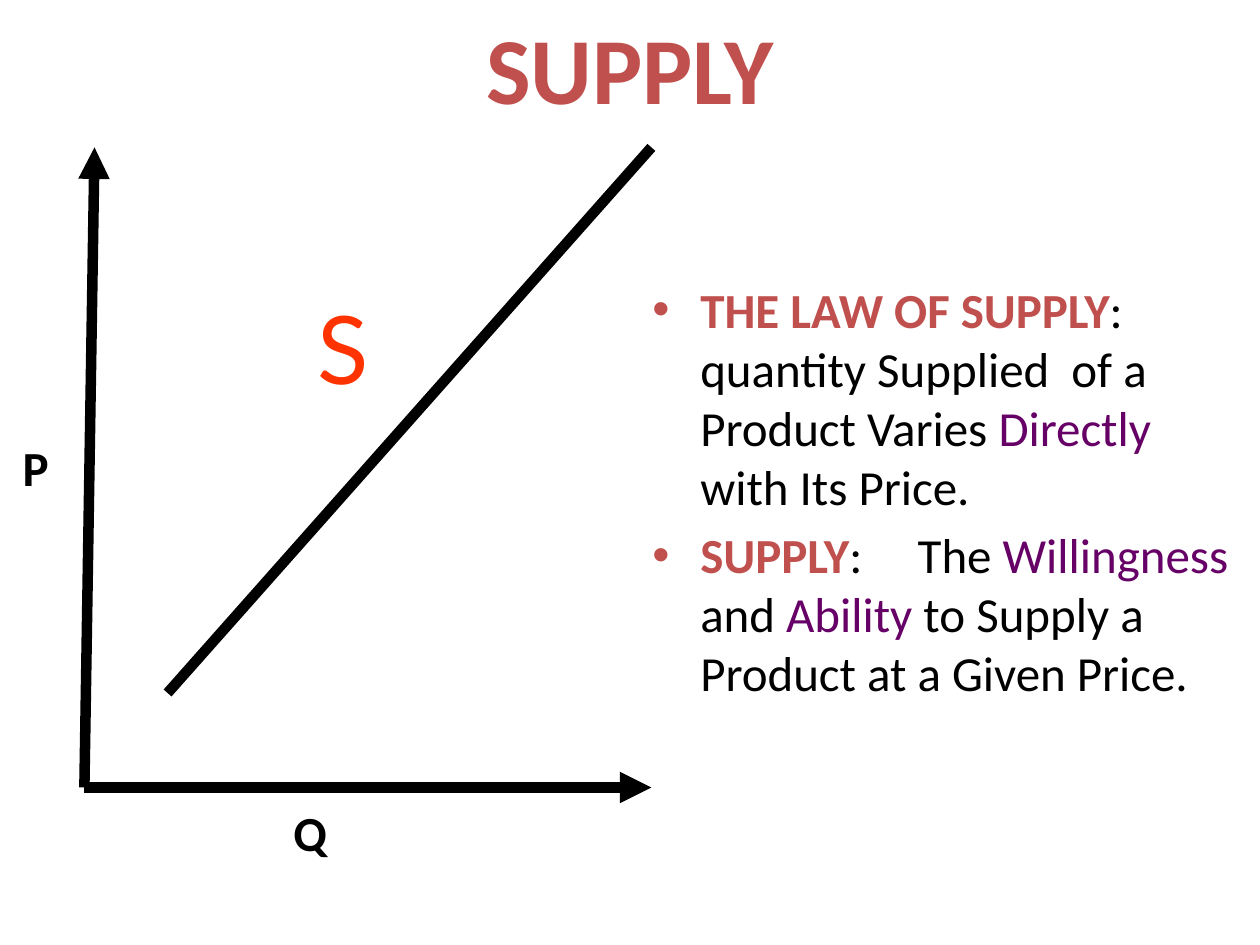
from dataclasses import dataclass

from lxml.etree import SubElement
from pptx import Presentation
from pptx.dml.color import RGBColor
from pptx.enum.shapes import MSO_CONNECTOR as Connector
from pptx.enum.text import MSO_ANCHOR as Anchor, PP_ALIGN as Align
from pptx.oxml.ns import qn
from pptx.util import Inches, Pt

RED, PURPLE, BLACK, ORANGE = "C0504D", "660066", "000000", "FF3300"


@dataclass(frozen=True)
class Line:
    start: tuple[float, float]
    end: tuple[float, float]
    arrow: bool = False


@dataclass(frozen=True)
class Label:
    text: str
    area: tuple[float, float, float, float]
    size: float = 28
    color: str = BLACK
    font: str = "Calibri"
    bold: bool = True
    align: Align = Align.LEFT
    anchor: Anchor = Anchor.TOP
    inset: float = 0.1


@dataclass(frozen=True)
class Part:
    text: str
    color: str = BLACK
    bold: bool = False
    spacing: float = 0


LINES = [
    Line((1.33, 5.5), (5.17, 1.17)),
    Line((0.67, 6.25), (0.75, 1.17), arrow=True),
    Line((0.67, 6.25), (5.17, 6.25), arrow=True),
]
LABELS = [
    Label("SUPPLY", (0.5, 0.08, 9, 0.9), 54, RED, align=Align.CENTER, anchor=Anchor.MIDDLE),
    Label("S", (2.42, 2.25, 0.41, 1), 54, ORANGE, "Lato", bold=False),
    Label("P", (0, 3.42, 0.57, 0.57), inset=0.18),
    Label("Q", (2.23, 6.32, 0.5, 0.57)),
]
DEFINITIONS = [
    [
        Part("THE LAW OF SUPPLY", RED, bold=True),
        Part(": quantity Supplied  of a Product Varies "),
        Part("Directly", PURPLE),
        Part(" with Its Price."),
    ],
    [
        Part("SUPPLY", RED, bold=True),
        Part(":"),
        Part(" ", spacing=25.3),
        Part("The "),
        Part("Willingness", PURPLE),
        Part(" and "),
        Part("Ability", PURPLE),
        Part(" to Supply a Product at a Given Price."),
    ],
]


def rgb(color: str) -> RGBColor:
    return RGBColor.from_string(color)


def add_box(page, area: tuple, anchor=Anchor.TOP, inset: float = 0.1):
    frame = page.shapes.add_textbox(*map(Inches, area)).text_frame
    frame.word_wrap = True
    frame.vertical_anchor = anchor
    frame.margin_left = Inches(inset)
    return frame


def add_text(para, text: str, *, size: float = 28, color: str = BLACK,
             font: str = "Calibri", bold: bool = False, spacing: float = 0) -> None:
    span = para.add_run()
    span.text = text
    span.font.size = Pt(size)
    span.font.name = font
    span.font.bold = bold
    span.font.color.rgb = rgb(color)
    if spacing:
        span.font._element.set("spc", str(round(spacing * 100)))


def add_label(page, label: Label) -> None:
    para = add_box(page, label.area, label.anchor, label.inset).paragraphs[0]
    para.alignment = label.align
    add_text(para, label.text, size=label.size, color=label.color,
             font=label.font, bold=label.bold)


def add_line(page, line: Line) -> None:
    connector = page.shapes.add_connector(
        Connector.STRAIGHT, *map(Inches, line.start + line.end))
    connector.line.width = Pt(6)
    connector.line.color.rgb = rgb(BLACK)
    if line.arrow:
        SubElement(connector.line._get_or_add_ln(), qn("a:tailEnd"), type="triangle")
    SubElement(connector._element.spPr, qn("a:effectLst"))


def set_bullet(para, color: str) -> None:
    properties = para._p.get_or_add_pPr()
    indent = Inches(0.38)
    properties.set("marL", str(indent))
    properties.set("indent", str(-indent))
    bullet_color = SubElement(properties, qn("a:buClr"))
    SubElement(bullet_color, qn("a:srgbClr"), val=color)
    SubElement(properties, qn("a:buFont"), typeface="Arial")
    SubElement(properties, qn("a:buChar"), char="•")


def add_definitions(page) -> None:
    frame = add_box(page, (5.08, 2.17, 4.83, 4.5))
    for index, parts in enumerate(DEFINITIONS):
        para = frame.add_paragraph() if index else frame.paragraphs[0]
        set_bullet(para, RED)
        if index:
            para.space_before = Pt(5.6)
        for part in parts:
            add_text(para, part.text, color=part.color, bold=part.bold, spacing=part.spacing)


def main() -> None:
    """Build the supply curve slide."""
    deck = Presentation()
    deck.slide_width, deck.slide_height = Inches(10), Inches(7.5)
    page = deck.slides.add_slide(deck.slide_layouts[6])
    for line in LINES:
        add_line(page, line)
    for label in LABELS:
        add_label(page, label)
    add_definitions(page)
    deck.save("out.pptx")


if __name__ == "__main__":
    main()
